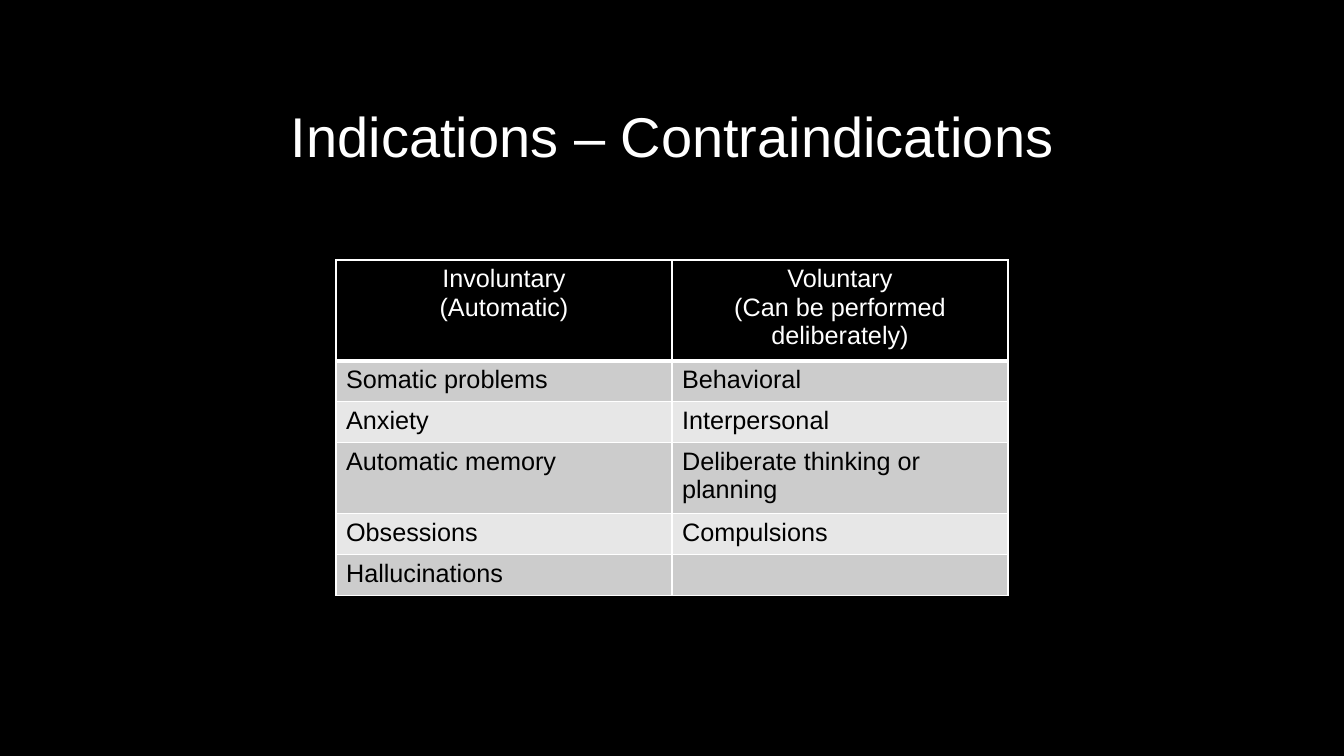
from dataclasses import dataclass

from lxml import etree
from pptx import Presentation
from pptx import util as u
from pptx.dml.color import RGBColor
from pptx.enum import text
from pptx.oxml.ns import qn


@dataclass(frozen=True)
class Theme:
    font: str = "Arial"
    title_size: int = 40
    table_size: int = 18
    black: str = "000000"
    white: str = "FFFFFF"
    bands: tuple = ("CCCCCC", "E7E7E7")
    border: int = 1
    header_rule: int = 3


THEME = Theme()
WIDTH, HEIGHT = u.Inches(13.33), u.Inches(7.5)
TITLE = "Indications – Contraindications"
ROWS = [
    ("Involuntary\n(Automatic)", "Voluntary\n(Can be performed deliberately)"),
    ("Somatic problems", "Behavioral"),
    ("Anxiety", "Interpersonal"),
    ("Automatic memory", "Deliberate thinking or planning"),
    ("Obsessions", "Compulsions"),
    ("Hallucinations", ""),
]


def share(left, top, width, height):
    """Turn shares of the slide's size into a box."""
    return (int(WIDTH * left), int(HEIGHT * top),
            int(WIDTH * width), int(HEIGHT * height))


def style_text(frame, size, color, align):
    for para in frame.paragraphs:
        para.alignment = align
        for span in para.runs:
            span.font.name = THEME.font
            span.font.size = u.Pt(size)
            span.font.bold = False
            span.font.color.rgb = RGBColor.from_string(color)


def add_title(page, box):
    frame = page.shapes.add_textbox(*box).text_frame
    frame.word_wrap = True
    frame.vertical_anchor = text.MSO_ANCHOR.MIDDLE
    frame.text = TITLE
    frame.paragraphs[0].line_spacing = 0.9
    style_text(frame, THEME.title_size, THEME.white, text.PP_ALIGN.CENTER)


def set_borders(cell, bottom):
    properties = cell._tc.get_or_add_tcPr()
    widths = dict.fromkeys(("lnL", "lnR", "lnT"), THEME.border) | {"lnB": bottom}
    for side, points in widths.items():
        line = etree.SubElement(properties, qn("a:" + side), w=str(u.Pt(points)))
        fill = etree.SubElement(line, qn("a:solidFill"))
        etree.SubElement(fill, qn("a:srgbClr"), val=THEME.white)


def fill_cell(cell, words, row):
    header = row == 0
    cell.text = words
    style_text(cell.text_frame, THEME.table_size,
               THEME.white if header else THEME.black,
               text.PP_ALIGN.CENTER if header else text.PP_ALIGN.LEFT)
    set_borders(cell, THEME.header_rule if header else THEME.border)
    cell.fill.solid()
    color = THEME.black if header else THEME.bands[(row - 1) % 2]
    cell.fill.fore_color.rgb = RGBColor.from_string(color)


def add_comparison(page, box):
    table = page.shapes.add_table(len(ROWS), len(ROWS[0]), *box).table
    for row, entries in enumerate(ROWS):
        for column, words in enumerate(entries):
            fill_cell(table.cell(row, column), words, row)


def main():
    deck = Presentation()
    deck.slide_width, deck.slide_height = WIDTH, HEIGHT
    page = deck.slides.add_slide(deck.slide_layouts[6])
    page.background.fill.solid()
    page.background.fill.fore_color.rgb = RGBColor.from_string(THEME.black)
    add_title(page, share(0.075, 0.09, 0.85, 0.19))
    add_comparison(page, share(0.25, 0.344, 0.5, 0.325))
    deck.save("out.pptx")


if __name__ == "__main__":
    main()
